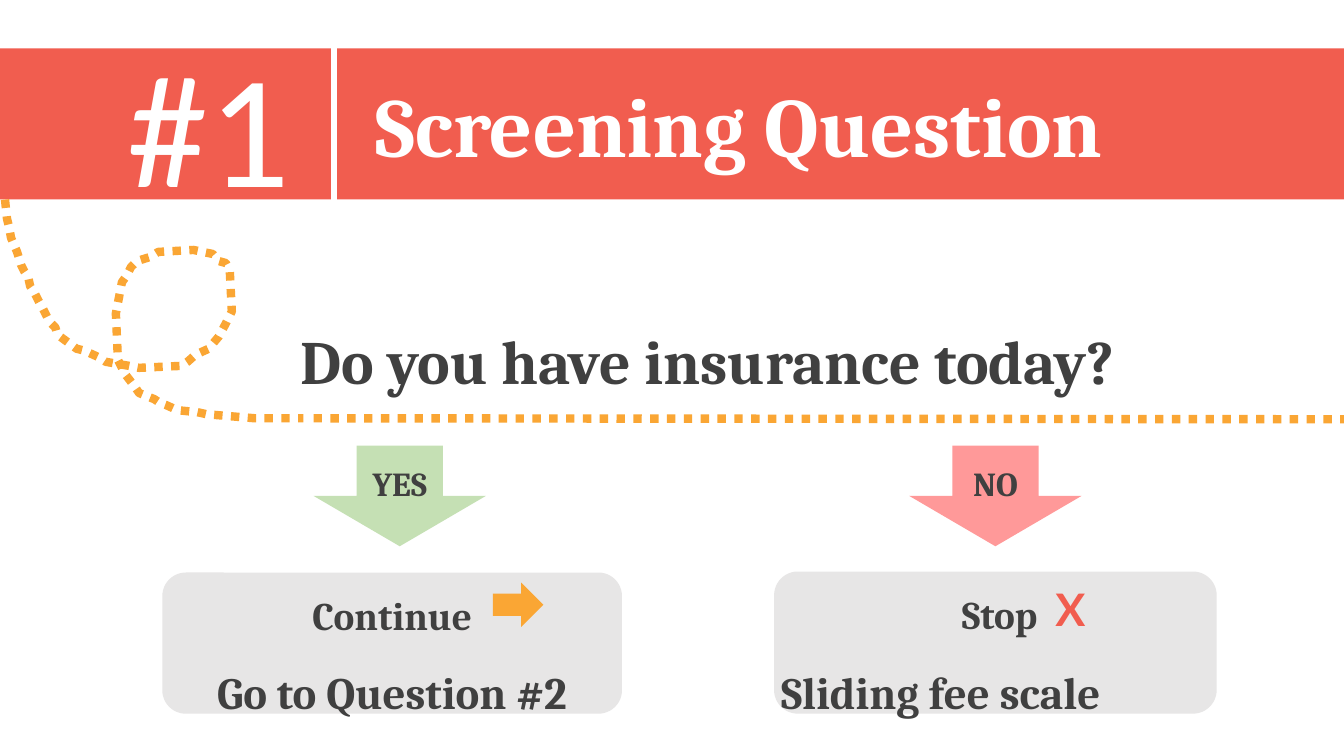
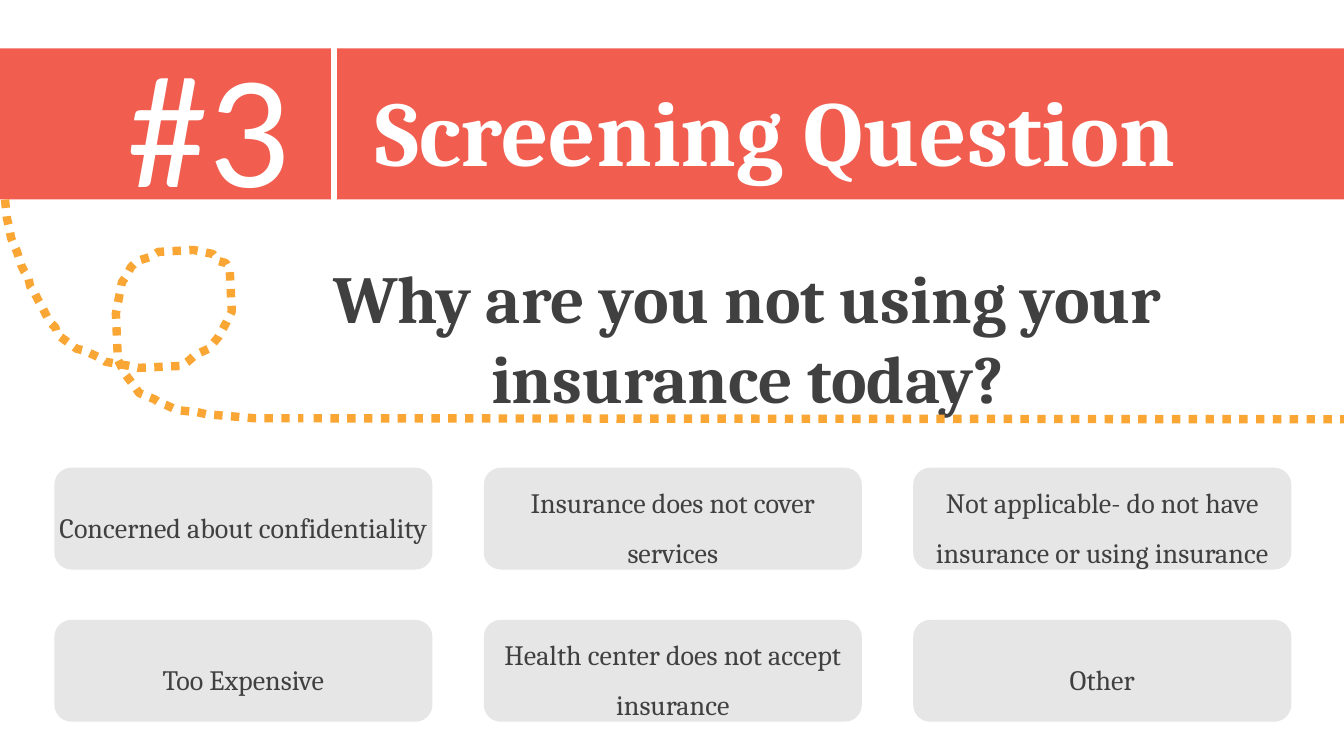
from dataclasses import dataclass

import pptx
import pptx.dml.color
import pptx.enum.dml
import pptx.enum.shapes
import pptx.enum.text
import pptx.oxml.ns
import pptx.slide
import pptx.util
from lxml import etree

SHAPE = pptx.enum.shapes.MSO_SHAPE
ALIGN = pptx.enum.text.PP_ALIGN
ANCHOR = pptx.enum.text.MSO_ANCHOR
WIDTH, HEIGHT = pptx.util.Inches(13.33), pptx.util.Inches(7.5)

# Shared colours and fonts
CORAL, ORANGE, GRAY, DARK, WHITE = "F15D4F", "FAA634", "E7E6E6", "404040", "FFFFFF"
GREEN, PINK = "C5E0B4", "FF9999"
SERIF = "Cambria"


@dataclass(frozen=True)
class Area:
    """A rectangle in percent of the slide's width and height."""
    left: float
    top: float
    width: float
    height: float

    def lengths(self) -> tuple[int, int, int, int]:
        return (across(self.left), down(self.top), across(self.width), down(self.height))


@dataclass(frozen=True)
class Line:
    """One paragraph with its format."""
    text: str
    size: float
    color: str = DARK
    bold: bool = True
    font: str = SERIF
    align: ALIGN = ALIGN.CENTER
    spacing: float = 1.0


@dataclass(frozen=True)
class Block:
    """A preset shape with its text."""
    kind: SHAPE
    area: Area
    fill: str
    lines: tuple[Line, ...] = ()


@dataclass(frozen=True)
class Header:
    number: str
    title_size: int
    question: Line
    question_area: Area


# Shared places
BAND = Area(0, 6.4, 100, 20)
NUMBER = Area(8.78, 2.8, 18.75, 27.2)
TITLE = Area(27.15, 9.07, 68.93, 14.8)
DIVIDER_X = 24.83
TRAIL_START, TRAIL_Y = 23.33, 55.33

# Outline of the looping trail, in hundredths of an inch
LOOP = (
    (5, 198), (7, 217), (9, 225), (11, 236), (17, 250), (21, 263), (24, 269),
    (28, 275), (30, 284), (34, 290), (38, 298), (42, 305), (49, 319), (55, 325),
    (57, 332), (76, 346), (84, 348), (99, 355), (105, 359), (128, 363), (138, 365),
    (180, 363), (186, 359), (194, 352), (207, 346), (217, 334), (224, 321),
    (230, 309), (228, 269), (224, 261), (217, 259), (211, 252), (201, 250),
    (192, 248), (157, 250), (149, 255), (136, 259), (130, 265), (126, 273),
    (121, 280), (115, 311), (117, 357), (121, 365), (124, 371), (134, 384),
    (138, 390), (153, 396), (159, 400), (165, 402), (176, 407), (196, 409),
    (205, 411), (253, 415), (301, 415),
)


def across(share: float) -> int:
    return round(WIDTH * share / 100)


def down(share: float) -> int:
    return round(HEIGHT * share / 100)


def rgb(color: str) -> pptx.dml.color.RGBColor:
    return pptx.dml.color.RGBColor.from_string(color)


def write(frame, lines: tuple[Line, ...], anchor=ANCHOR.TOP) -> None:
    frame.word_wrap = True
    frame.auto_size = pptx.enum.text.MSO_AUTO_SIZE.NONE
    frame.vertical_anchor = anchor
    for index, line in enumerate(lines):
        para = frame.add_paragraph() if index else frame.paragraphs[0]
        para.text = line.text
        para.alignment = line.align
        para.line_spacing = line.spacing
        para.space_before = pptx.util.Pt(0)
        para.font.name = line.font
        para.font.size = pptx.util.Pt(line.size)
        para.font.bold = line.bold
        para.font.color.rgb = rgb(line.color)


def add_text(page: pptx.slide.Slide, area: Area, line: Line):
    box = page.shapes.add_textbox(*area.lengths())
    write(box.text_frame, (line,))
    return box


def add_block(page: pptx.slide.Slide, block: Block) -> None:
    shape = page.shapes.add_shape(block.kind, *block.area.lengths())
    shape.shadow.inherit = False
    shape.fill.solid()
    shape.fill.fore_color.rgb = rgb(block.fill)
    shape.line.fill.background()
    if block.lines:
        write(shape.text_frame, block.lines, ANCHOR.MIDDLE)
    if block.kind == SHAPE.ROUNDED_RECTANGLE:
        shape.text_frame.margin_left = shape.text_frame.margin_right = 0


def style_line(line, color: str, points: float, dotted: bool = False) -> None:
    line.color.rgb = rgb(color)
    line.width = pptx.util.Pt(points)
    if dotted:
        line.dash_style = pptx.enum.dml.MSO_LINE.ROUND_DOT


def add_line(page: pptx.slide.Slide, start: tuple[float, float], end: tuple[float, float]):
    line = page.shapes.add_connector(
        pptx.enum.shapes.MSO_CONNECTOR.STRAIGHT,
        across(start[0]), down(start[1]), across(end[0]), down(end[1]))
    etree.SubElement(line.element.spPr, pptx.oxml.ns.qn("a:effectLst"))
    return line.line


def fill_placeholder(holder, area: Area, line: Line) -> None:
    holder.left, holder.top, holder.width, holder.height = area.lengths()
    write(holder.text_frame, (line,))
    # Bring the text in front of the band, without bullet or indent
    holder.element.getparent().append(holder.element)
    for para in holder.text_frame.paragraphs:
        properties = para._p.get_or_add_pPr()
        properties.set("marL", "0")
        properties.set("indent", "0")
        bullet = etree.Element(pptx.oxml.ns.qn("a:buNone"))
        properties.find(pptx.oxml.ns.qn("a:defRPr")).addprevious(bullet)


def add_trail(page: pptx.slide.Slide) -> None:
    builder = page.shapes.build_freeform(*LOOP[0], scale=pptx.util.Inches(0.01))
    builder.add_line_segments(LOOP[1:], close=False)
    loop = builder.convert_to_shape()
    loop.shadow.inherit = False
    loop.fill.background()
    style_line(loop.line, ORANGE, 6, dotted=True)
    tail = add_line(page, (TRAIL_START, TRAIL_Y), (100, TRAIL_Y + 0.13))
    style_line(tail, ORANGE, 6, dotted=True)


def add_page(deck, header: Header) -> pptx.slide.Slide:
    page = deck.slides.add_slide(deck.slide_layouts[1])
    title, question = page.placeholders
    add_block(page, Block(SHAPE.RECTANGLE, BAND, CORAL))
    add_text(page, NUMBER, Line(header.number, 115, WHITE, False, "Calibri", ALIGN.LEFT))
    fill_placeholder(title, TITLE, Line(
        "Screening Question", header.title_size, WHITE, align=ALIGN.LEFT))
    divider = add_line(page, (DIVIDER_X, BAND.top), (DIVIDER_X, BAND.top + BAND.height))
    style_line(divider, WHITE, 4.5)
    fill_placeholder(question, header.question_area, header.question)
    add_trail(page)
    return page


def add_insurance_page(deck) -> None:
    page = add_page(deck, Header(
        "#1", 60, Line("Do you have insurance today?", 44, align=ALIGN.LEFT),
        Area(21.6, 42, 78, 11.2)))
    blocks = (
        Block(SHAPE.DOWN_ARROW, Area(23.33, 58.93, 12.83, 13.33), GREEN, (Line("YES", 24),)),
        Block(SHAPE.DOWN_ARROW, Area(67.65, 58.93, 12.83, 13.33), PINK, (Line("NO", 24),)),
        Block(SHAPE.ROUNDED_RECTANGLE, Area(12.08, 75.73, 34.2, 18.67), GRAY, (
            Line("Continue", 28, spacing=1.5),
            Line("Go to Question #2", 32, spacing=1.5))),
        Block(SHAPE.ROUNDED_RECTANGLE, Area(57.6, 75.6, 32.93, 18.8), GRAY, (
            Line(" Stop", 28, spacing=1.5),
            Line("Sliding fee scale", 32, align=ALIGN.LEFT, spacing=1.5))),
        Block(SHAPE.RIGHT_ARROW, Area(36.68, 77.07, 3.75, 5.87), ORANGE),
    )
    for block in blocks:
        add_block(page, block)
    cross = add_text(page, Area(78.53, 76.27, 3.75, 8.53),
                     Line("X", 32, CORAL, font="Lato", align=ALIGN.LEFT))
    cross.text_frame.margin_left = 0


def add_reasons_page(deck) -> None:
    page = add_page(deck, Header(
        "#3", 66, Line("Why are you not using your insurance today?", 48),
        Area(20.7, 33.2, 69.83, 22.93)))
    reasons = (
        ("Concerned about confidentiality", "Insurance does not cover services",
         "Not applicable- do not have insurance or using insurance"),
        ("Too Expensive", "Health center does not accept insurance", "Other"),
    )
    for row, texts in enumerate(reasons):
        for column, text in enumerate(texts):
            area = Area(4.05 + 31.95 * column, 61.87 + 20.13 * row, 28.13, 13.47)
            line = Line(text, 20, bold=False, spacing=1.5)
            add_block(page, Block(SHAPE.ROUNDED_RECTANGLE, area, GRAY, (line,)))


def main() -> None:
    deck = pptx.Presentation()
    deck.slide_width, deck.slide_height = WIDTH, HEIGHT
    add_insurance_page(deck)
    add_reasons_page(deck)
    deck.save("out.pptx")


if __name__ == "__main__":
    main()
